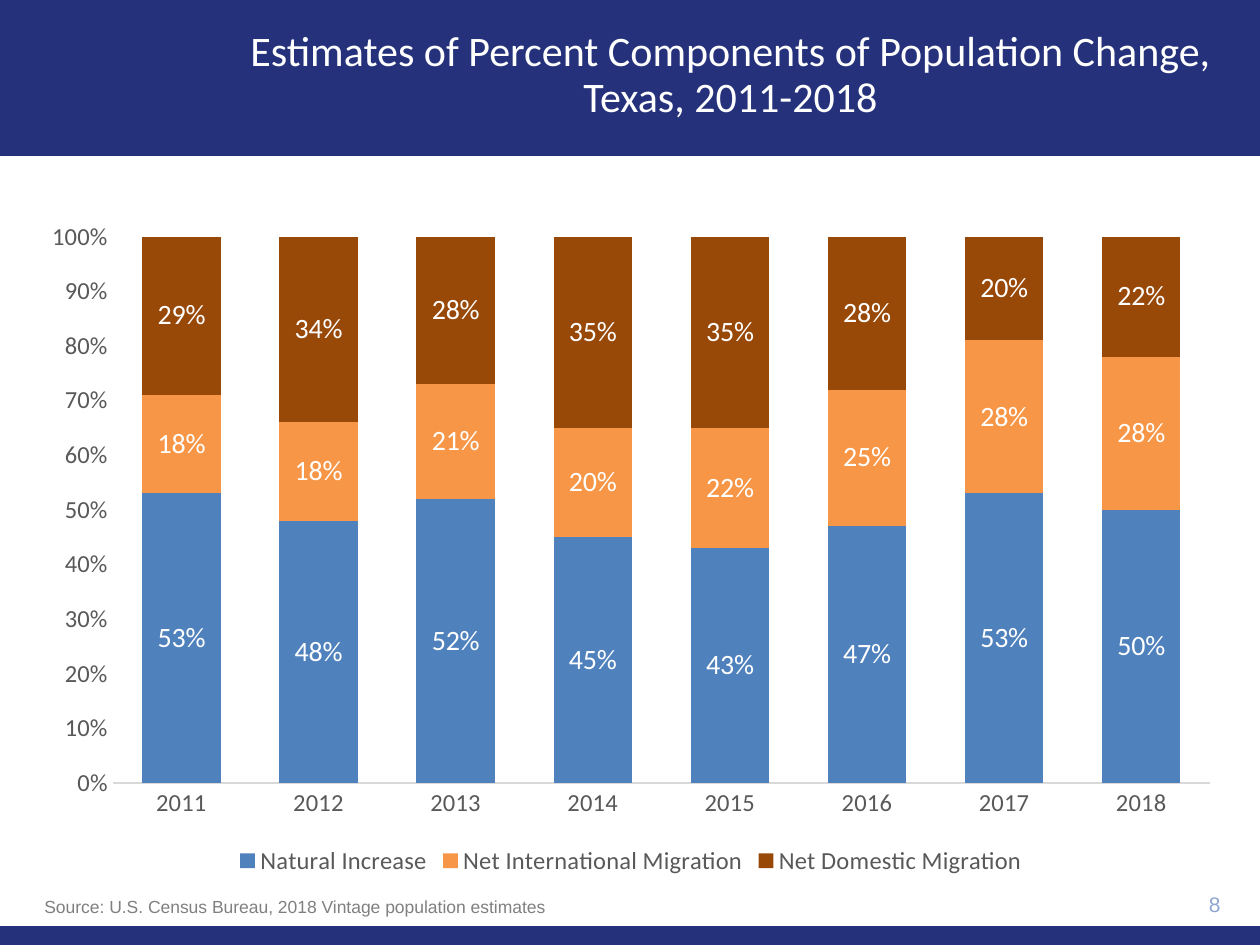
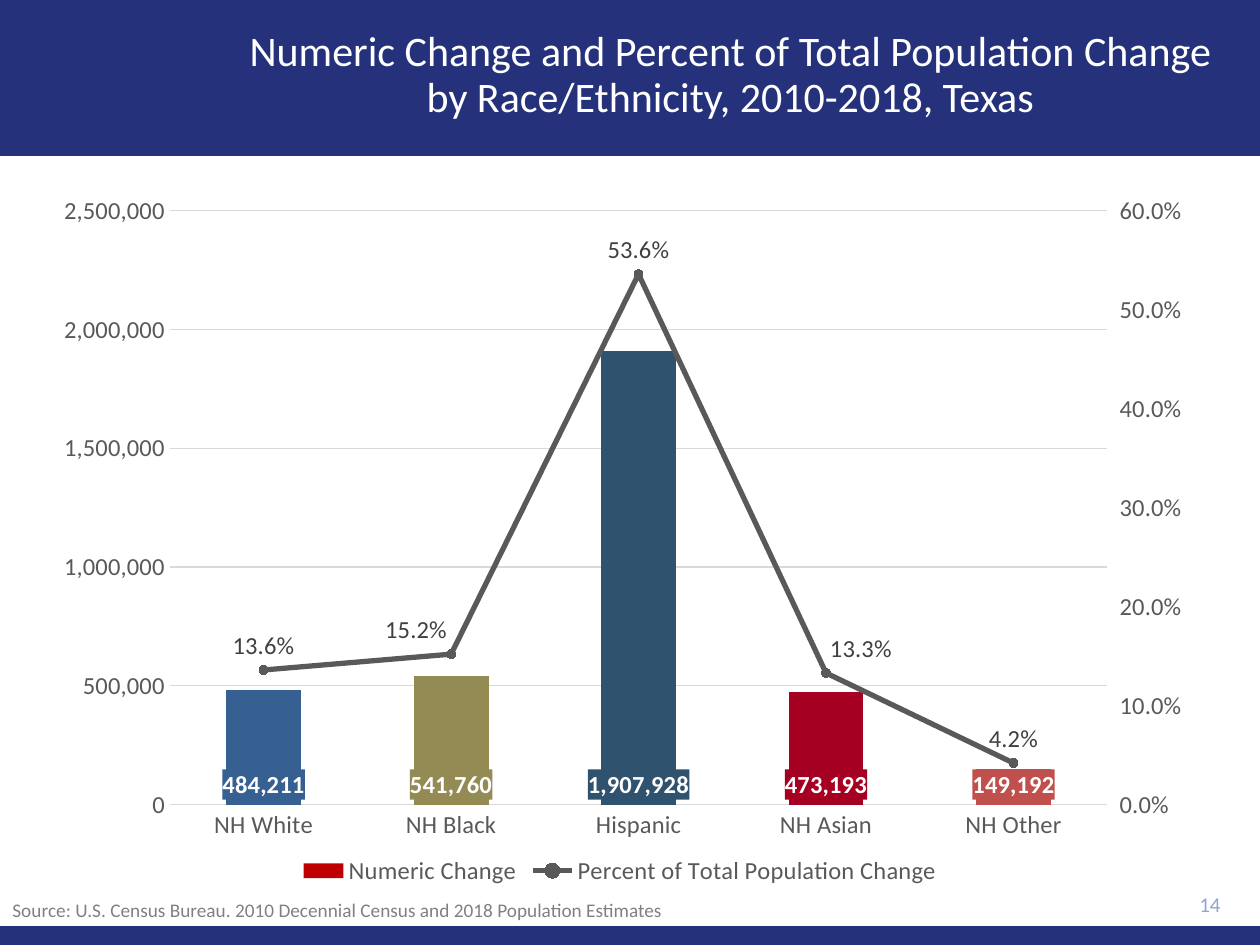
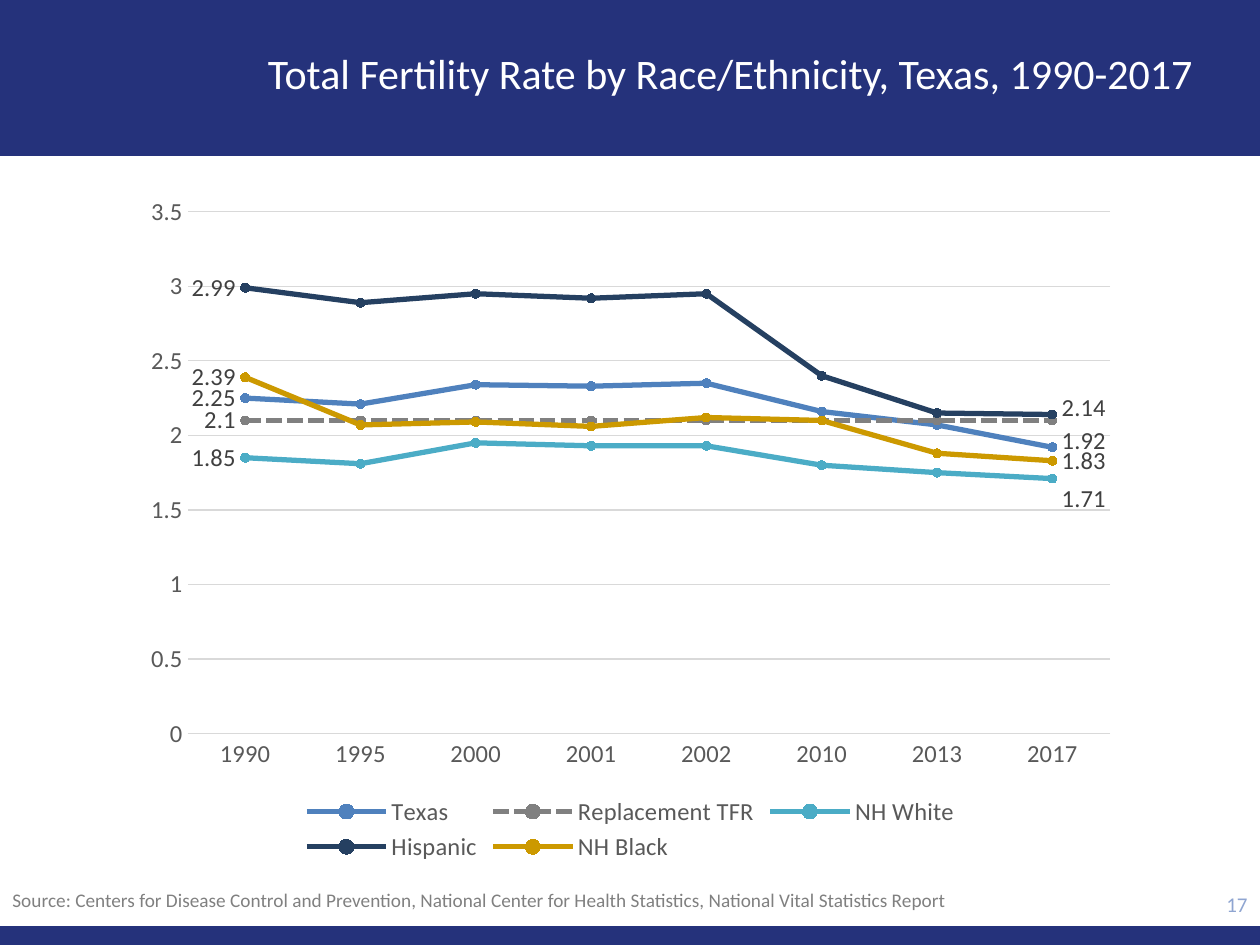
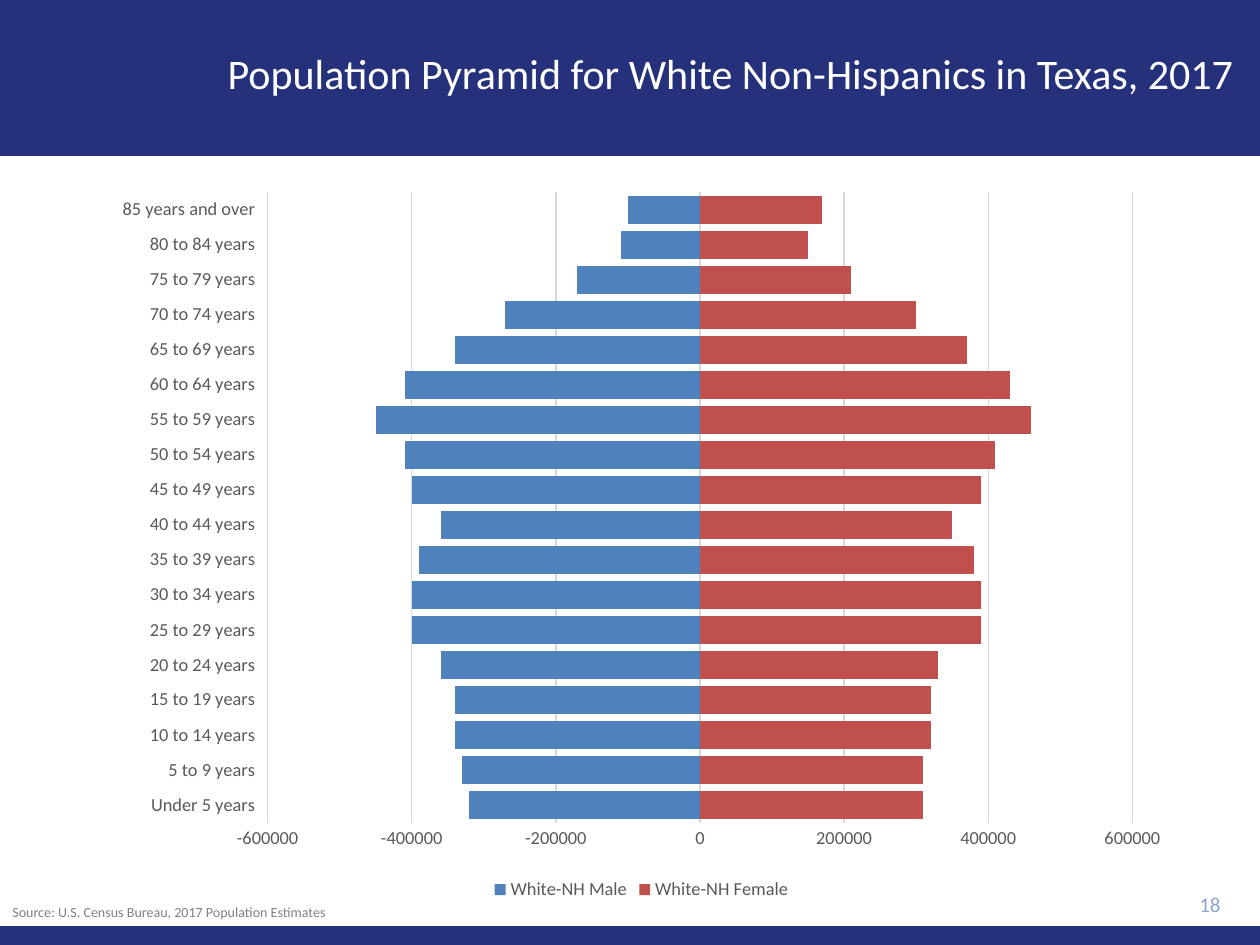
import copy

import pptx
import pptx.chart.axis
import pptx.chart.data
import pptx.dml.color
import pptx.enum.chart
import pptx.enum.dml
import pptx.enum.shapes
import pptx.enum.text
import pptx.oxml
import pptx.oxml.ns
import pptx.util

CHART = pptx.enum.chart.XL_CHART_TYPE
LABEL = pptx.enum.chart.XL_LABEL_POSITION
TICK = pptx.enum.chart.XL_TICK_MARK
ALIGN = pptx.enum.text.PP_ALIGN
ANCHOR = pptx.enum.text.MSO_ANCHOR

SCALE = 914400 / 126
FACE = "Calibri"
COLORS = {
    "navy": "25327B", "white": "FFFFFF", "page": "8FA5D1", "source": "808080",
    "text": "595959", "label": "404040", "rule": "D9D9D9", "blue": "4F81BD",
    "orange": "F79646", "brown": "984807", "red": "C0504D", "crimson": "C00000",
    "cobalt": "376092", "olive": "948A54", "slate": "2F526F", "ruby": "A50021",
    "teal": "4BACC6", "ink": "254061", "gold": "CC9900", "gray": "808080",
}
BANDS = [(0, 0, 1260, 156), (0, 926, 1260, 19)]
TITLE = (214, 13, 1033, 126)


def px(*nums):
    """Turn px lengths into EMU."""
    return [pptx.util.Emu(round(n * SCALE)) for n in nums]


def rgb(name):
    return pptx.dml.color.RGBColor.from_string(COLORS[name])


def paint(fill, color):
    fill.solid()
    fill.fore_color.rgb = rgb(color)


def ink(font, size, color, face=FACE, bold=False):
    font.size = pptx.util.Pt(size)
    font.name = face
    font.bold = bold
    font.color.rgb = rgb(color)


def stroke(line, color, width):
    line.color.rgb = rgb(color)
    line.width = pptx.util.Pt(width)


def qn(tag):
    return pptx.oxml.ns.qn(tag)


def xml(tag, inner="", attrs=""):
    """Parse one chart element with its namespaces declared."""
    spaces = pptx.oxml.ns.nsdecls("c", "a")
    return pptx.oxml.parse_xml(f"<{tag} {spaces} {attrs}>{inner}</{tag}>")


def place(mode, **parts):
    """Make a manual layout from fractions of the chart."""
    vals = "".join(f'<c:{key} val="{val}"/>' for key, val in parts.items())
    return xml("c:layout", f"<c:manualLayout>{mode}{vals}</c:manualLayout>")


def write(slide, box, words, size, color, face=FACE, align=ALIGN.LEFT,
          anchor=ANCHOR.TOP, space=None):
    frame = slide.shapes.add_textbox(*px(*box)).text_frame
    frame.word_wrap = True
    frame.vertical_anchor = anchor
    frame.text = words
    para = frame.paragraphs[0]
    para.alignment = align
    para.line_spacing = space
    ink(para.runs[0].font, size, color, face)
    return frame


def source(slide, box, words, size, face=FACE):
    frame = write(slide, box, words, size, "source", face)
    frame.auto_size = pptx.enum.text.MSO_AUTO_SIZE.SHAPE_TO_FIT_TEXT


def dress(slide, layout):
    """Draw the bands once and hand them to the layout."""
    for hold in list(layout.placeholders):
        hold.element.getparent().remove(hold.element)
    for box in BANDS:
        band = slide.shapes.add_shape(
            pptx.enum.shapes.MSO_SHAPE.RECTANGLE, *px(*box))
        band.shadow.inherit = False
        paint(band.fill, "navy")
        band.line.fill.background()
        layout.shapes.element.append(band.element)


def begin(deck, title, page, left=1121, face=FACE):
    """Add a slide with its title and page number."""
    slide = deck.slides.add_slide(deck.slide_layouts[6])
    write(slide, TITLE, title, 24, "white", align=ALIGN.CENTER,
          anchor=ANCHOR.MIDDLE, space=0.9)
    write(slide, (left, 883, 112, 43), str(page), 12, "page", face,
          ALIGN.RIGHT, ANCHOR.MIDDLE)
    return slide


def plot(slide, kind, box, cats, rows, span, size=14, grid=True, fmt="General"):
    """Add a chart of (name, values) rows; span is axis low, high and step."""
    data = pptx.chart.data.CategoryChartData()
    data.categories = cats
    for name, vals in rows:
        data.add_series(name, vals)
    chart = slide.shapes.add_chart(kind, *px(*box), data).chart
    chart.has_title = False
    ink(chart.font, size, "text")
    chart.has_legend = True
    chart.legend.position = pptx.enum.chart.XL_LEGEND_POSITION.BOTTOM
    chart.legend.include_in_layout = False
    ink(chart.legend.font, size, "text")
    for axis in (chart.category_axis, chart.value_axis):
        axis.major_tick_mark = axis.minor_tick_mark = TICK.NONE
        ink(axis.tick_labels.font, size, "text")
    stroke(chart.category_axis.format.line, "rule", 0.75)
    axis = chart.value_axis
    axis.format.line.fill.background()
    axis.minimum_scale, axis.maximum_scale, axis.major_unit = span
    axis.has_major_gridlines = grid
    if grid:
        stroke(axis.major_gridlines.format.line, "rule", 0.75)
    axis.tick_labels.number_format = fmt
    axis.tick_labels.number_format_is_linked = False
    chart.plots[0].vary_by_categories = False
    return chart


def bars(chart, gap, colors, lap=None):
    group = chart.plots[0]
    group.gap_width = gap
    if lap is not None:
        group.overlap = lap
    for series, color in zip(group.series, colors):
        series.invert_if_negative = False
        paint(series.format.fill, color)


def trace(series, color, dash=None):
    """Style a line series with round markers."""
    series.smooth = False
    stroke(series.format.line, color, 3)
    if dash:
        series.format.line.dash_style = dash
    mark = series.marker
    mark.style = pptx.enum.chart.XL_MARKER_STYLE.CIRCLE
    mark.size = 5
    paint(mark.format.fill, color)
    mark.format.line.color.rgb = rgb(color)


def label(series, size, color, fmt, pos, bold=False):
    tags = series.data_labels
    tags.show_value = True
    tags.number_format = fmt
    tags.number_format_is_linked = False
    tags.position = pos
    ink(tags.font, size, color, bold=bold)


def tag(chart, series, spot, pos, color="label", fmt="General", shift=None,
        back=None):
    """Label one point, with an optional shift and background."""
    note = series.points[spot].data_label
    note.position = pos
    ink(note.font, 14, color, bold=bool(back))
    node = chart.element.xpath(
        f".//c:ser[c:idx/@val='{series.index}']"
        f"//c:dLbl[c:idx/@val='{spot}']")[0]
    if shift:
        node.find(qn("c:idx")).addnext(place("", x=shift[0], y=shift[1]))
    text = node.find(qn("c:txPr"))
    text.addprevious(xml("c:numFmt", attrs=f'formatCode="{fmt}" sourceLinked="0"'))
    if back:
        text.addprevious(xml(
            "c:spPr",
            f'<a:solidFill><a:srgbClr val="{COLORS[back]}"/></a:solidFill>'))


def split(chart, span, fmt):
    """Move the last bar series to a line on a right-hand axis."""
    group = chart.element.xpath(".//c:barChart")[0]
    row = group.findall(qn("c:ser"))[-1]
    for node in row.findall(qn("c:invertIfNegative")):
        row.remove(node)
    line = xml("c:lineChart",
               '<c:grouping val="standard"/><c:varyColors val="0"/>'
               '<c:marker val="1"/><c:axId val="50"/><c:axId val="60"/>')
    line.find(qn("c:marker")).addprevious(row)
    group.addnext(line)

    left = chart.value_axis._element
    base = chart.category_axis._element
    right, under = copy.deepcopy(left), copy.deepcopy(base)
    for node, own, other in ((right, "60", "50"), (under, "50", "60")):
        node.find(qn("c:axId")).set("val", own)
        node.find(qn("c:crossAx")).set("val", other)
    right.find(qn("c:axPos")).set("val", "r")
    right.find(qn("c:crosses")).set("val", "max")
    left.addnext(right)
    right.addnext(under)
    pptx.chart.axis.CategoryAxis(under).visible = False
    axis = pptx.chart.axis.ValueAxis(right)
    axis.has_major_gridlines = False
    axis.major_tick_mark = TICK.OUTSIDE
    axis.minimum_scale, axis.maximum_scale, axis.major_unit = span
    axis.tick_labels.number_format = fmt
    return chart.plots[1].series[0]


def parts(deck):
    slide = begin(deck, "Estimates of Percent Components of Population Change, "
                  "Texas, 2011-2018", 8, face="Arial")
    dress(slide, deck.slide_layouts[6])
    rows = [
        ("Natural Increase", (0.53, 0.48, 0.52, 0.45, 0.43, 0.47, 0.53, 0.5)),
        ("Net International Migration",
         (0.18, 0.18, 0.21, 0.2, 0.22, 0.25, 0.28, 0.28)),
        ("Net Domestic Migration",
         (0.29, 0.34, 0.28, 0.35, 0.35, 0.28, 0.2, 0.22)),
    ]
    years = [str(year) for year in range(2011, 2019)]
    chart = plot(slide, CHART.COLUMN_STACKED, (28, 208, 1206, 673), years, rows,
                 (0, 1, 0.1), grid=False, fmt="0%")
    bars(chart, 75, ("blue", "orange", "brown"), 100)
    for series in chart.plots[0].series:
        label(series, 16, "white", "0%", LABEL.CENTER)
    source(slide, (32, 890, 1250, 34),
           "Source: U.S. Census Bureau, 2018 Vintage population estimates",
           10, "Arial")


def change(deck):
    slide = begin(deck, "Numeric Change and Percent of Total Population Change "
                  "by Race/Ethnicity, 2010-2018, Texas", 14)
    source(slide, (0, 892, 1102, 59), "Source: U.S. Census Bureau. 2010 "
           "Decennial Census and 2018 Population Estimates", 11)
    groups = ["NH White", "NH Black", "Hispanic", "NH Asian", "NH Other"]
    rows = [
        ("Numeric Change", (484211, 541760, 1907928, 473193, 149192)),
        ("Percent of Total Population Change",
         (0.136, 0.152, 0.536, 0.133, 0.042)),
    ]
    chart = plot(slide, CHART.COLUMN_CLUSTERED, (37, 184, 1166, 707), groups,
                 rows, (0, 2500000, 500000), fmt="#,##0")
    share = split(chart, (0, 0.6, 0.1), "0.0%")
    bars(chart, 150, ["crimson"])
    count = chart.plots[0].series[0]
    label(count, 14, "label", "#,##0", LABEL.INSIDE_BASE, True)
    for spot, color in enumerate(("cobalt", "olive", "slate", "ruby", "red")):
        paint(count.points[spot].format.fill, color)
        tag(chart, count, spot, LABEL.INSIDE_BASE, "white", "#,##0", back=color)
    trace(share, "text")
    label(share, 14, "label", "0.0%", LABEL.ABOVE)
    for spot, move in ((1, -0.03), (3, 0.03)):
        tag(chart, share, spot, LABEL.ABOVE, fmt="0.0%", shift=(move, 0))
    area = chart.element.xpath(".//c:plotArea")[0]
    for node in area.findall(qn("c:layout")):
        area.remove(node)
    inner = ('<c:layoutTarget val="inner"/><c:xMode val="edge"/>'
             '<c:yMode val="edge"/>')
    area.insert(0, place(inner, x=0.114, y=0.038, w=0.804, h=0.84))


def births(deck):
    slide = begin(deck, "Total Fertility Rate by Race/Ethnicity, Texas, "
                  "1990-2017", 17, 1148)
    years = ["1990", "1995", "2000", "2001", "2002", "2010", "2013", "2017"]
    rows = [
        ("Texas", (2.25, 2.21, 2.34, 2.33, 2.35, 2.16, 2.07, 1.92)),
        ("Replacement TFR", (2.1,) * len(years)),
        ("NH White", (1.85, 1.81, 1.95, 1.93, 1.93, 1.8, 1.75, 1.71)),
        ("Hispanic", (2.99, 2.89, 2.95, 2.92, 2.95, 2.4, 2.15, 2.14)),
        ("NH Black", (2.39, 2.07, 2.09, 2.06, 2.12, 2.1, 1.88, 1.83)),
    ]
    chart = plot(slide, CHART.LINE_MARKERS, (131, 183, 999, 684), years, rows,
                 (0, 3.5, 0.5))
    dash = pptx.enum.dml.MSO_LINE.SQUARE_DOT
    looks = [("blue", None, -0.01), ("gray", dash, None), ("teal", None, 0.03),
             ("ink", None, -0.01), ("gold", None, 0)]
    for series, (color, style, drop) in zip(chart.plots[0].series, looks):
        trace(series, color, style)
        series.data_labels.show_value = False
        tag(chart, series, 0, LABEL.LEFT)
        if drop is not None:
            tag(chart, series, len(years) - 1, LABEL.RIGHT,
                shift=(0, drop) if drop else None)
    source(slide, (0, 882, 1102, 37), "Source: Centers for Disease Control and "
           "Prevention, National Center for Health Statistics, National Vital "
           "Statistics Report", 11)


def ages(deck):
    slide = begin(deck, "Population Pyramid for White Non-Hispanics in Texas, "
                  "2017", 18)
    bins = [f"{age} to {age + 4} years" for age in range(5, 85, 5)]
    bins = ["Under 5 years", *bins, "85 years and over"]
    men = (320, 330, 340, 340, 360, 400, 400, 390, 360,
           400, 410, 450, 410, 340, 270, 170, 110, 100)
    women = (310, 310, 320, 320, 330, 390, 390, 380, 350,
             390, 410, 460, 430, 370, 300, 210, 150, 170)
    rows = [("White-NH Male", [-1000 * num for num in men]),
            ("White-NH Female", [1000 * num for num in women])]
    chart = plot(slide, CHART.BAR_STACKED, (101, 178, 1081, 728), bins, rows,
                 (-600000, 600000, 200000), 10.5)
    bars(chart, 25, ("blue", "red"), 100)
    low = pptx.enum.chart.XL_TICK_LABEL_POSITION.LOW
    chart.category_axis.tick_label_position = low
    source(slide, (0, 897, 343, 30),
           "Source: U.S. Census Bureau, 2017 Population Estimates", 8)


def main():
    deck = pptx.Presentation()
    deck.slide_width, deck.slide_height = px(1260, 945)
    for build in (parts, change, births, ages):
        build(deck)
    deck.save("out.pptx")


if __name__ == "__main__":
    main()
